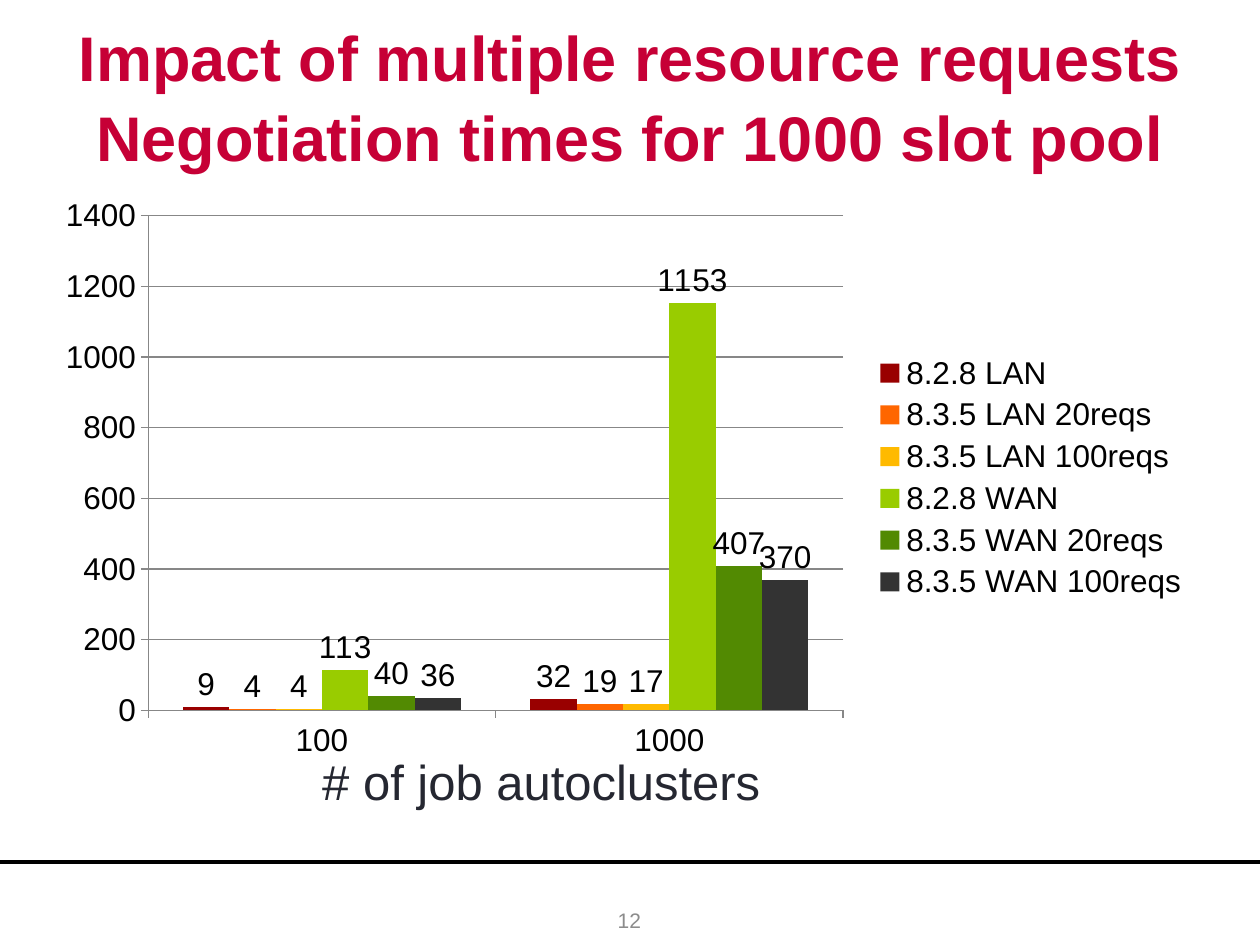
from pptx import Presentation
from pptx.chart.data import CategoryChartData
from pptx.dml.color import RGBColor
from pptx.enum.chart import XL_CHART_TYPE as ChartType
from pptx.enum.chart import XL_LABEL_POSITION as LabelPosition
from pptx.enum.chart import XL_LEGEND_POSITION as LegendPosition
from pptx.enum.chart import XL_TICK_MARK as TickMark
from pptx.enum.shapes import MSO_CONNECTOR as Connector
from pptx.enum.text import MSO_ANCHOR as Anchor
from pptx.enum.text import PP_ALIGN as Align
from pptx.oxml import parse_xml
from pptx.oxml.ns import nsdecls
from pptx.util import Inches, Pt

COLORS = {
    "title": "C60036", "caption": "252731", "number": "8C8C8C",
    "text": "000000", "rule": "000000", "grid": "878787",
}
CATEGORIES = ["100", "1000"]
SERIES = [
    ("8.2.8 LAN", (9, 32), "990000"),
    ("8.3.5 LAN 20reqs", (4, 19), "FF6600"),
    ("8.3.5 LAN 100reqs", (4, 17), "FFBA00"),
    ("8.2.8 WAN", (113, 1153), "99CC00"),
    ("8.3.5 WAN 20reqs", (40, 407), "528A02"),
    ("8.3.5 WAN 100reqs", (36, 370), "333333"),
]
PLOT_LAYOUT = {"x": 0.09, "y": 0.05, "w": 0.6, "h": 0.85}


def rgb(name):
    return RGBColor.from_string(COLORS.get(name, name))


class SlideBuilder:
    """Holds the text style and the current slide."""

    font_name = "Arial"

    def __init__(self, slide):
        self.slide = slide

    def style_font(self, font, size, color, bold=False):
        values = {"name": self.font_name, "size": Pt(size), "bold": bold}
        for key, value in values.items():
            setattr(font, key, value)
        font.color.rgb = rgb(color)

    def text(self, bounds, words, size, color, bold=False, spacing=1.0):
        box = self.slide.shapes.add_textbox(*map(Inches, bounds))
        frame = box.text_frame
        for key, value in {"word_wrap": True, "vertical_anchor": Anchor.MIDDLE}.items():
            setattr(frame, key, value)
        para = frame.paragraphs[0]
        para.text = words
        for key, value in {"alignment": Align.CENTER, "line_spacing": spacing}.items():
            setattr(para, key, value)
        for span in para.runs:
            self.style_font(span.font, size, color, bold)

    def line(self, start, end, color, width):
        rule = self.slide.shapes.add_connector(
            Connector.STRAIGHT, *map(Inches, start + end))
        rule.line.color.rgb = rgb(color)
        rule.line.width = Pt(width)
        rule._element.spPr.append(parse_xml(f"<a:effectLst {nsdecls('a')}/>"))

    def column_chart(self, bounds, categories, series, size):
        data = CategoryChartData()
        data.categories = categories
        for name, values, _ in series:
            data.add_series(name, values)
        chart = self.slide.shapes.add_chart(
            ChartType.COLUMN_CLUSTERED, *map(Inches, bounds), data).chart
        chart.has_title = False
        self.style_font(chart.font, size, "text")

        # Columns and value labels
        plot = chart.plots[0]
        for key, value in {"gap_width": 150, "overlap": 0, "vary_by_categories": False}.items():
            setattr(plot, key, value)
        for column, (_, _, color) in zip(plot.series, series):
            column.format.fill.solid()
            column.format.fill.fore_color.rgb = rgb(color)
            labels = column.data_labels
            for key, value in {"show_value": True, "position": LabelPosition.OUTSIDE_END}.items():
                setattr(labels, key, value)
            self.style_font(labels.font, size, "text")

        # Axes and gridlines
        value_axis = chart.value_axis
        scale = {"minimum_scale": 0, "maximum_scale": 1400, "major_unit": 200,
                 "has_major_gridlines": True}
        for key, value in scale.items():
            setattr(value_axis, key, value)
        for axis in (chart.category_axis, value_axis):
            axis.major_tick_mark = TickMark.OUTSIDE
            axis.minor_tick_mark = TickMark.NONE
        for part in (chart.category_axis, value_axis, value_axis.major_gridlines):
            part.format.line.color.rgb = rgb("grid")
            part.format.line.width = Pt(0.75)

        # Legend
        chart.has_legend = True
        legend = {"position": LegendPosition.RIGHT, "include_in_layout": False}
        for key, value in legend.items():
            setattr(chart.legend, key, value)
        self.style_font(chart.legend.font, size, "text")

        # Inner plot position, as fractions of the chart
        sizes = "".join(f'<c:{key} val="{value}"/>' for key, value in PLOT_LAYOUT.items())
        layout = parse_xml(
            f'<c:layout {nsdecls("c")}><c:manualLayout><c:layoutTarget val="inner"/>'
            f'<c:xMode val="edge"/><c:yMode val="edge"/>{sizes}</c:manualLayout></c:layout>')
        plot_area = chart._chartSpace.chart.plotArea
        for old in plot_area.findall(layout.tag):
            plot_area.remove(old)
        plot_area.insert(0, layout)


def main():
    deck = Presentation()
    deck.slide_width, deck.slide_height = Inches(10), Inches(7.5)
    page = SlideBuilder(deck.slides.add_slide(deck.slide_layouts[6]))

    # Footer rule and page number
    page.line((0, 6.84), (10, 6.84), "rule", 2.25)
    page.text((3.83, 7.1, 2.33, 0.4), "12", 12, "number")

    # Title
    page.text((0, 0.25, 10, 1),
              "Impact of multiple resource requests\vNegotiation times for 1000 slot pool",
              36, "title", bold=True, spacing=1.05)

    # Negotiation times with the category caption
    page.column_chart((0.35, 1.48, 9.19, 4.62), CATEGORIES, SERIES, 18)
    page.text((1.2, 5.86, 6.19, 0.68), "# of job autoclusters", 28, "caption")

    deck.save("out.pptx")


if __name__ == "__main__":
    main()
